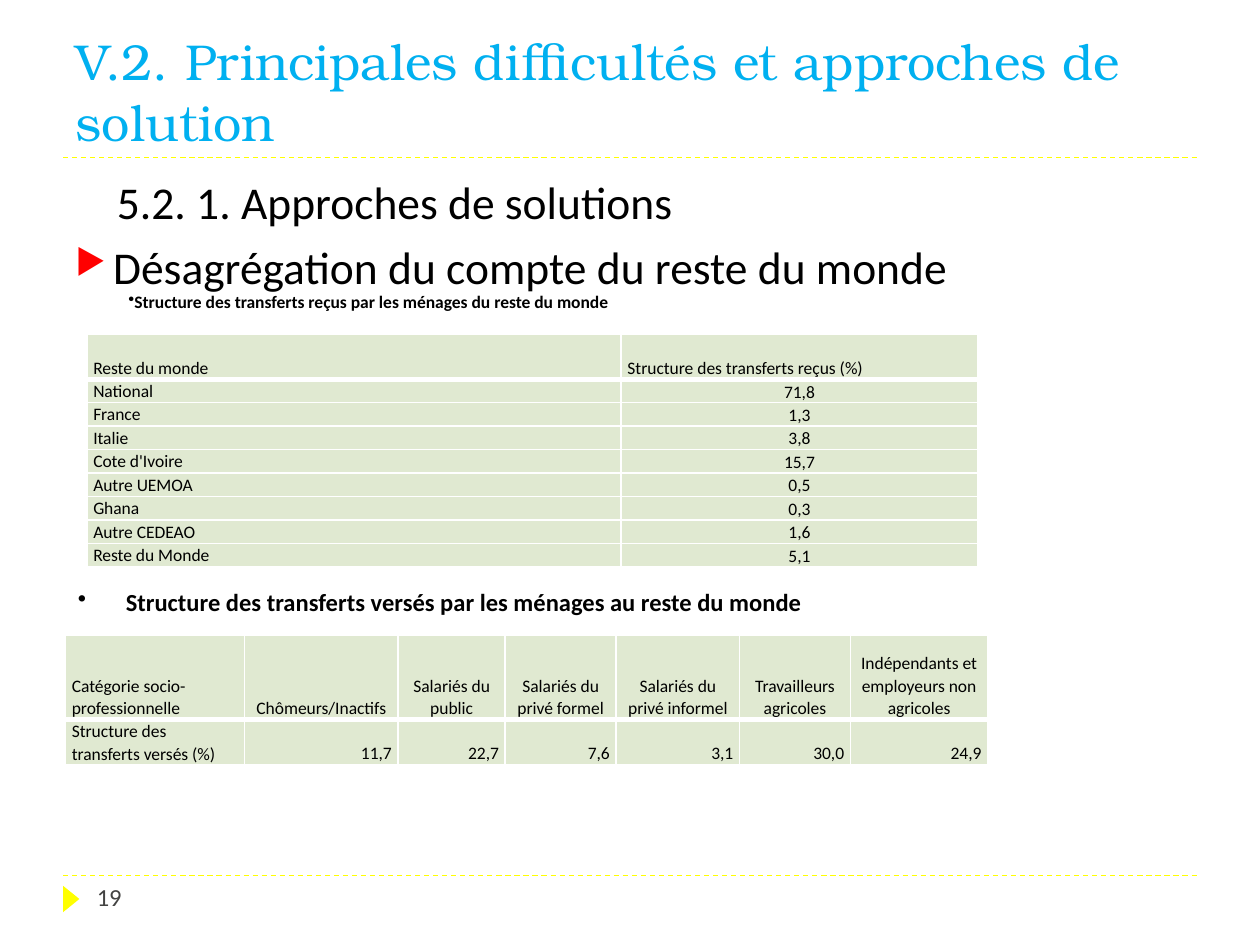
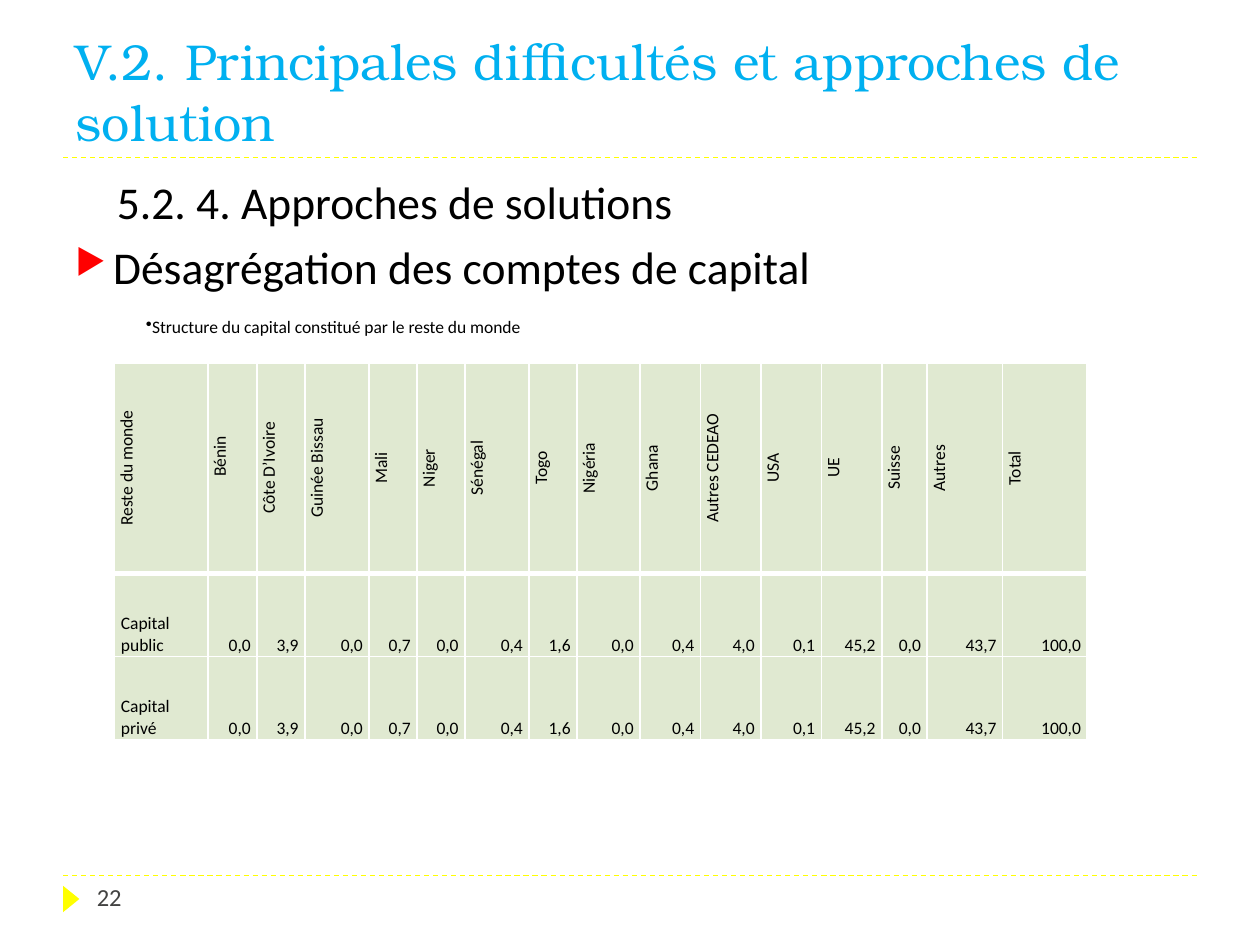
from lxml.etree import SubElement
from pptx import Presentation
from pptx.dml.color import RGBColor
from pptx.enum.dml import MSO_LINE
from pptx.enum.shapes import MSO_CONNECTOR, MSO_SHAPE
from pptx.enum.text import MSO_ANCHOR as Anchor, PP_ALIGN as Align
from pptx.oxml.ns import qn
from pptx.util import Inches, Pt

SANS, SERIF = "Calibri", "TeX Gyre Bonum"
BLACK, WHITE, GREY = "000000", "FFFFFF", "434342"
SKY, YELLOW, RED, GREEN = "00B0F0", "FFFF00", "FF0000", "E0E9D1"
TITLE = "V.2. Principales difficultés et approches de solution"


def rgb(code):
    return RGBColor.from_string(code)


def place(shape, box):
    shape.left, shape.top, shape.width, shape.height = map(Inches, box)


def style(para, size, color=BLACK, face=SANS, bold=False):
    for run in para.runs:
        font = run.font
        font.size, font.name, font.bold = Pt(size), face, bold
        font.color.rgb = rgb(color)


def indent(para, left, first=0):
    props = para._p.get_or_add_pPr()
    props.set("marL", str(Inches(left)))
    props.set("indent", str(Inches(first)))


def bullet(para, mark, color=None, scale=100):
    props = para._p.get_or_add_pPr()
    if color:
        SubElement(SubElement(props, qn("a:buClr")), qn("a:srgbClr"), val=color)
    SubElement(props, qn("a:buSzPct"), val=str(scale * 1000))
    SubElement(props, qn("a:buChar"), char=mark)


def add_text(slide, box, *lines):
    frame = slide.shapes.add_textbox(*map(Inches, box)).text_frame
    frame.word_wrap = True
    frame.text = "\n".join(lines)
    return frame.paragraphs


# Parts shared by all slides
def add_rule(slide, top):
    rule = slide.shapes.add_connector(
        MSO_CONNECTOR.STRAIGHT, Inches(0.5), Inches(top), Inches(9.5), Inches(top))
    rule.line.color.rgb = rgb(YELLOW)
    rule.line.width = Pt(0.75)
    rule.line.dash_style = MSO_LINE.DASH
    SubElement(rule._element.spPr, qn("a:effectLst"))


def add_title(slide):
    title = slide.shapes.title
    place(title, (0.5, 0.17, 9, 1.08))
    frame = title.text_frame
    frame.text = TITLE
    frame.vertical_anchor = Anchor.BOTTOM
    para = frame.paragraphs[0]
    para.alignment = Align.LEFT
    style(para, 28.8, SKY, SERIF)


def add_footer(slide, number):
    mark = slide.shapes.add_shape(
        MSO_SHAPE.ISOSCELES_TRIANGLE, *map(Inches, (0.46, 7.07, 0.21, 0.13)))
    mark.rotation = 90
    mark.shadow.inherit = False
    mark.fill.solid()
    mark.fill.fore_color.rgb = rgb(YELLOW)
    mark.line.fill.background()
    style(add_text(slide, (0.67, 6.95, 2.17, 0.4), str(number))[0], 14, GREY)


def add_body(slide, head, point):
    first, second = add_text(slide, (0.5, 1.33, 9, 1.1), head, point)
    indent(first, 0.33)
    indent(second, 0.3, -0.3)
    bullet(second, "▶", RED, 76)
    second.space_before = Pt(6)
    for para in (first, second):
        style(para, 26)


def start(deck, number, head, point):
    slide = deck.slides.add_slide(deck.slide_layouts[5])
    for top in (1.25, 6.95):
        add_rule(slide, top)
    add_title(slide)
    add_body(slide, head, point)
    add_footer(slide, number)
    return slide


def add_caption(slide, box, text, size=10, bold=False):
    para = add_text(slide, box, text)[0]
    bullet(para, "•")
    style(para, size, bold=bold)
    return para


# Tables
def set_edges(cell, head):
    props = cell._tc.get_or_add_tcPr()
    for side in "LRTB":
        width = Pt(3 if head and side == "B" else 1)
        edge = SubElement(props, qn("a:ln" + side), w=str(width))
        SubElement(SubElement(edge, qn("a:solidFill")), qn("a:srgbClr"), val=WHITE)


def fill_cell(cell, text, align, anchor, head):
    cell.text = text
    cell.vertical_anchor = anchor
    cell.margin_left = cell.margin_right = Inches(0.05)
    cell.margin_top = cell.margin_bottom = 0
    set_edges(cell, head)
    cell.fill.solid()
    cell.fill.fore_color.rgb = rgb(GREEN)
    para = cell.text_frame.paragraphs[0]
    para.alignment = align
    para.line_spacing = 1.07
    style(para, 10)


def add_grid(slide, left, top, widths, heights, rows, aligns, names=Anchor.BOTTOM):
    """aligns: first column, other heads, other values; names: anchor of row names."""
    first, heads, values = aligns
    box = (left, top, sum(widths), sum(heights))
    grid = slide.shapes.add_table(len(rows), len(widths), *map(Inches, box)).table
    grid.first_row = grid.horz_banding = False
    for col, width in zip(grid.columns, widths):
        col.width = Inches(width)
    for r, (row, height) in enumerate(zip(rows, heights)):
        grid.rows[r].height = Inches(height)
        for c, text in enumerate(row):
            align = first if c == 0 else heads if r == 0 else values
            anchor = names if c == 0 and r else Anchor.BOTTOM
            fill_cell(grid.cell(r, c), text, align, anchor, r == 0)
    return grid


# Slide on transfers
def add_transfers(deck):
    slide = start(deck, 19, "5.2. 1. Approches de solutions",
                  "Désagrégation du compte du reste du monde")
    add_caption(slide, (0.92, 2.26, 6, 0.27),
                "Structure des transferts reçus par les ménages du reste du monde",
                bold=True)
    received = [
        ("Reste du monde", "Structure des transferts reçus (%)"),
        ("National", "71,8"), ("France", "1,3"), ("Italie", "3,8"),
        ("Cote d'Ivoire", "15,7"), ("Autre UEMOA", "0,5"), ("Ghana", "0,3"),
        ("Autre CEDEAO", "1,6"), ("Reste du Monde", "5,1"),
    ]
    count = len(received) - 1
    add_grid(slide, 0.69, 2.65, (4.24, 2.83), [0.36] + [1.49 / count] * count,
             received, (Align.LEFT, Align.LEFT, Align.CENTER), Anchor.TOP)

    para = add_caption(
        slide, (0.52, 4.49, 7.76, 0.45),
        "Structure des transferts versés par les ménages au reste du monde", 14, True)
    indent(para, 0.38, -0.38)
    para.alignment = Align.JUSTIFY
    para.line_spacing = 1.5
    paid = [
        ("Catégorie socio-professionnelle", "Chômeurs/Inactifs", "Salariés du public",
         "Salariés du privé formel", "Salariés du privé informel",
         "Travailleurs agricoles", "Indépendants et employeurs non agricoles"),
        ("Structure des transferts versés (%)",
         "11,7", "22,7", "7,6", "3,1", "30,0", "24,9"),
    ]
    add_grid(slide, 0.52, 5.04, (1.42, 1.22, 0.85, 0.88, 0.98, 0.88, 1.09),
             (0.67, 0.33), paid, (Align.LEFT, Align.CENTER, Align.RIGHT))


# Slide on capital
def add_capital(deck):
    slide = start(deck, 22, "5.2. 4. Approches de solutions",
                  "Désagrégation des comptes de capital")
    add_caption(slide, (1.06, 2.46, 6, 0.27),
                "Structure du capital constitué par le reste du monde")
    heads = ("Reste du monde", "Bénin", "Côte D’Ivoire", "Guinée Bissau", "Mali",
             "Niger", "Sénégal", "Togo", "Nigéria", "Ghana", "Autres CEDEAO",
             "USA", "UE", "Suisse", "Autres", "Total")
    shares = ("0,0", "3,9", "0,0", "0,7", "0,0", "0,4", "1,6", "0,0", "0,4",
              "4,0", "0,1", "45,2", "0,0", "43,7", "100,0")
    rows = [heads, ("Capital public", *shares), ("Capital privé", *shares)]
    widths = (0.74, 0.39, 0.38, 0.51, 0.38, 0.38, 0.51, 0.38,
              0.5, 0.48, 0.48, 0.48, 0.48, 0.36, 0.6, 0.67)
    grid = add_grid(slide, 0.91, 2.88, widths, (1.67, 0.66, 0.66), rows,
                    (Align.LEFT, Align.CENTER, Align.RIGHT))
    for c in range(len(heads)):
        cell = grid.cell(0, c)
        cell._tc.tcPr.set("vert", "vert270")
        cell.text_frame.paragraphs[0].alignment = Align.CENTER
    grid.cell(0, 1).margin_left = Inches(0.23)


def main():
    deck = Presentation()
    deck.slide_width, deck.slide_height = Inches(10), Inches(7.5)
    add_transfers(deck)
    add_capital(deck)
    deck.save("out.pptx")


if __name__ == "__main__":
    main()
